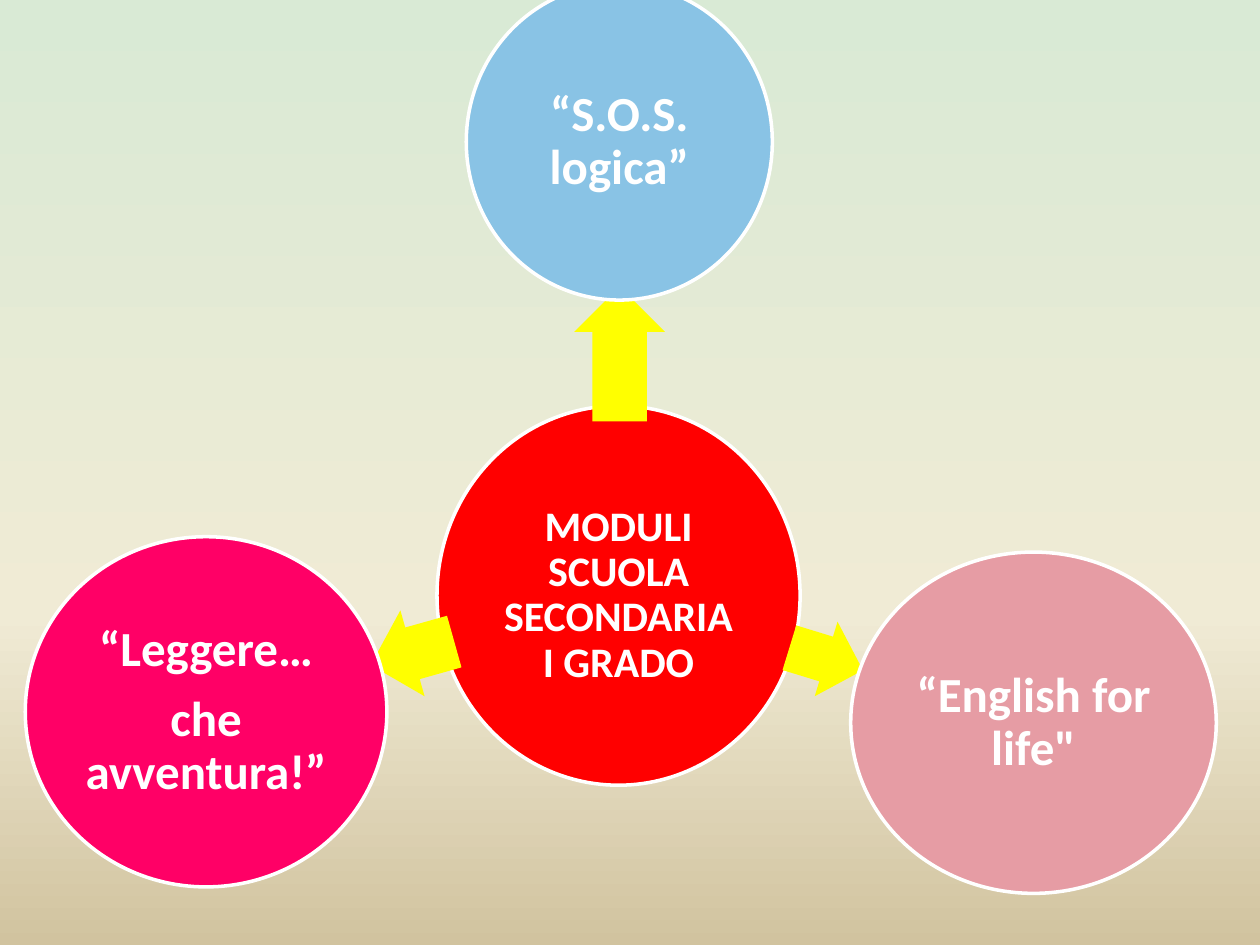
from copy import deepcopy

from pptx import Presentation
from pptx.dml.color import RGBColor
from pptx.enum.shapes import MSO_SHAPE as Shape
from pptx.enum.text import MSO_ANCHOR as Anchor, PP_ALIGN as Align
from pptx.oxml.ns import qn
from pptx.util import Cm, Pt

COLORS = {
    "mint": "D9EAD5", "cream": "F0EBD5", "sand": "D1C39F",
    "red": "FF0000", "blue": "89C3E5", "rose": "E69CA4", "pink": "FF0066",
    "yellow": "FFFF00", "white": "FFFFFF",
}


def rgb(name):
    return RGBColor.from_string(COLORS[name])


def add_filled(kind, box, color):
    shape = slide.shapes.add_shape(kind, *[Cm(length) for length in box])
    shape.shadow.inherit = False
    shape.fill.solid()
    shape.fill.fore_color.rgb = rgb(color)
    return shape


prs = Presentation()
prs.slide_width, prs.slide_height = Cm(25.4), Cm(19.05)
slide = prs.slides.add_slide(prs.slide_layouts[6])

backdrop = slide.background.fill
backdrop.gradient()
backdrop.gradient_angle = 270
stop_list = slide.element.find(".//" + qn("a:gsLst"))
stop_list.append(deepcopy(stop_list[0]))
for stop, (position, color) in zip(
    backdrop.gradient_stops, [(0, "mint"), (0.65, "cream"), (1, "sand")]
):
    stop.position = position
    stop.color.rgb = rgb(color)

modules = [
    (None, 0, (8.81, 8.18, 7.32, 7.65), "red", 24,
     ["MODULI SCUOLA SECONDARIA I GRADO"]),
    ((11.13, 6.22, 2.72, 1.83), 270, (9.4, -0.33, 6.17, 6.38), "blue", 28,
     ["“S.O.S. logica”"]),
    ((15.88, 12.5, 1.55, 1.57), 17, (17.15, 11.13, 7.37, 6.88), "rose", 28,
     ["“English for life\""]),
    ((7.44, 12.27, 1.75, 1.8), 164.3, (0.51, 10.82, 7.29, 7.06), "pink", 28,
     ["“Leggere…", "che avventura!”"]),
]

for arrow_box, angle, circle_box, color, size, lines in modules:
    if arrow_box:
        arrow = add_filled(Shape.RIGHT_ARROW, arrow_box, "yellow")
        arrow.line.fill.background()
        arrow.adjustments[0] = 0.6
        arrow.adjustments[1] = 0.5
        arrow.rotation = angle

    circle = add_filled(Shape.OVAL, circle_box, color)
    circle.line.color.rgb = rgb("white")
    circle.line.width = Pt(2)
    label = circle.text_frame
    label.word_wrap = True
    label.vertical_anchor = Anchor.MIDDLE
    label.margin_left = label.margin_right = Cm(0.1)
    label.margin_top = label.margin_bottom = Cm(0.1)
    for index, line in enumerate(lines):
        paragraph = label.add_paragraph() if index else label.paragraphs[0]
        paragraph.alignment = Align.CENTER
        paragraph.line_spacing = 0.9
        paragraph.space_after = Pt(round(size * 0.35, 1))
        run = paragraph.add_run()
        run.text = line
        run.font.name = "Calibri"
        run.font.size = Pt(size)
        run.font.bold = True
        run.font.color.rgb = rgb("white")

prs.save("out.pptx")
